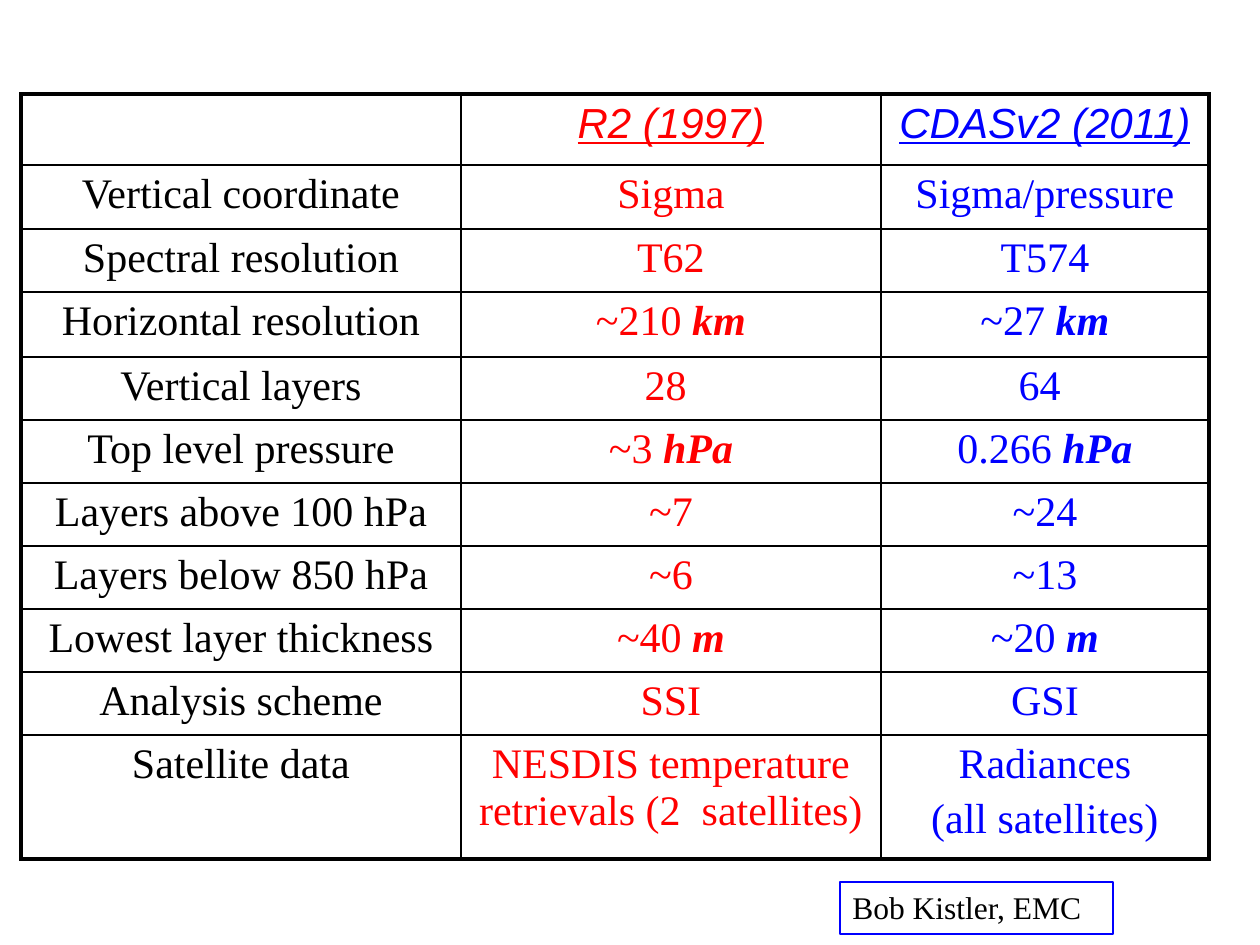
from lxml import etree
from pptx import Presentation
from pptx.dml.color import RGBColor
from pptx.enum.shapes import MSO_SHAPE
from pptx.enum.text import MSO_ANCHOR, PP_ALIGN
from pptx.oxml.ns import qn
from pptx.util import Emu, Pt

RECT = MSO_SHAPE.RECTANGLE
TOP = MSO_ANCHOR.TOP
LEFT, CENTER = PP_ALIGN.LEFT, PP_ALIGN.CENTER

SCALE = 914400 / 126
BLACK, RED, BLUE = "000000", "FF0000", "0000FF"
COLUMN_COLORS = [BLACK, RED, BLUE]
COLUMN_WIDTHS = [440, 420, 328]
ROW_HEIGHTS = [71, 64, 63, 65] + [63] * 6 + [124]

BODY = {"name": "Times New Roman", "size": Pt(24)}
HEADER = {"name": "Arial", "size": Pt(24), "italic": True, "underline": True}
UNIT = {**BODY, "bold": True, "italic": True}
CREDIT = {"name": "Times New Roman", "size": Pt(18)}

ROWS = [
    ["", "R2 (1997)", "CDASv2 (2011)"],
    ["Vertical coordinate", "Sigma", "Sigma/pressure"],
    ["Spectral resolution", "T62", "T574"],
    ["Horizontal resolution", ("~210 ", "km"), ("~27 ", "km")],
    ["Vertical layers", "28 ", "64 "],
    ["Top level pressure", ("~3 ", "hPa"), ("0.266 ", "hPa")],
    ["Layers above 100 hPa", "~7", "~24"],
    ["Layers below 850 hPa", "~6", "~13"],
    ["Lowest layer thickness", ("~40 ", "m"), ("~20 ", "m")],
    ["Analysis scheme", "SSI", "GSI"],
    ["Satellite data", "NESDIS temperature retrievals (2  satellites)",
     "Radiances\n(all satellites)"],
]


def px(n):
    return Emu(round(n * SCALE))


def rgb(value):
    return RGBColor.from_string(value)


def add_run(p, text, color, fmt):
    r = p.add_run()
    r.text = text
    for name, value in fmt.items():
        setattr(r.font, name, value)
    r.font.color.rgb = rgb(color)


def set_borders(cell, widths):
    tc_pr = cell._tc.get_or_add_tcPr()
    for i, (side, width) in enumerate(widths.items()):
        ln = etree.Element(qn(f"a:{side}"), w=str(Pt(width)))
        fill = etree.SubElement(ln, qn("a:solidFill"))
        etree.SubElement(fill, qn("a:srgbClr"), val=BLACK)
        tc_pr.insert(i, ln)


def fill_cell(cell, content, color, fmt):
    cell.fill.background()
    cell.vertical_anchor = TOP
    value, unit = content if isinstance(content, tuple) else (content, "")
    tf = cell.text_frame
    for i, line in enumerate(value.split("\n")):
        p = tf.add_paragraph() if i else tf.paragraphs[0]
        p.alignment = CENTER
        p.space_before = Pt(4.8)
        if line:
            add_run(p, line, color, fmt)
        if unit:
            add_run(p, unit, color, UNIT)


def add_comparison_table(slide, left, top):
    n_rows, n_cols = len(ROWS), len(COLUMN_WIDTHS)
    frame = slide.shapes.add_table(n_rows, n_cols, px(left), px(top),
                                   px(sum(COLUMN_WIDTHS)), px(sum(ROW_HEIGHTS)))
    table = frame.table
    table.first_row = table.horz_banding = False
    for column, width in zip(table.columns, COLUMN_WIDTHS):
        column.width = px(width)
    for i, (row, height) in enumerate(zip(table.rows, ROW_HEIGHTS)):
        row.height = px(height)
        for j, cell in enumerate(row.cells):
            fill_cell(cell, ROWS[i][j], COLUMN_COLORS[j], BODY if i else HEADER)
            outer = {"lnL": j == 0, "lnR": j == n_cols - 1,
                     "lnT": i == 0, "lnB": i == n_rows - 1}
            set_borders(cell, {side: 2.25 if edge else 1
                               for side, edge in outer.items()})


def add_credit_box(slide, left, top, width, height, text):
    sp = slide.shapes.add_shape(RECT, px(left), px(top), px(width), px(height))
    sp.shadow.inherit = False
    sp.fill.background()
    sp.line.color.rgb = rgb(BLUE)
    sp.line.width = Pt(0.75)
    tf = sp.text_frame
    tf.word_wrap = True
    tf.vertical_anchor = TOP
    p = tf.paragraphs[0]
    p.alignment = LEFT
    add_run(p, text, BLACK, CREDIT)


def main():
    prs = Presentation()
    prs.slide_width, prs.slide_height = px(1260), px(945)
    slide = prs.slides.add_slide(prs.slide_layouts[6])
    add_comparison_table(slide, 21, 94)
    add_credit_box(slide, 840, 882, 273, 52, "Bob Kistler, EMC")
    prs.save("out.pptx")


if __name__ == "__main__":
    main()
